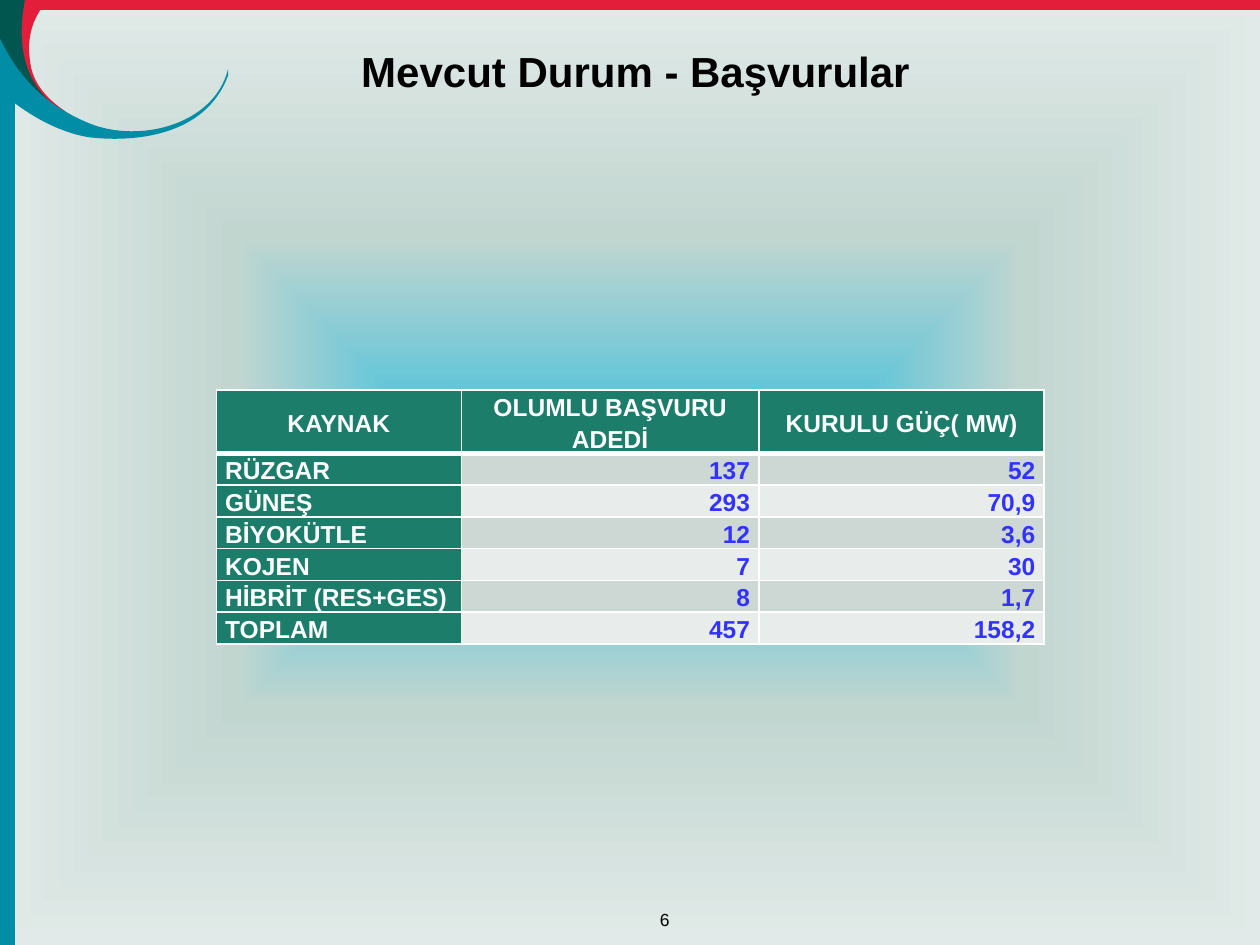
from lxml import etree
from pptx import Presentation
from pptx.dml.color import RGBColor
from pptx.enum.shapes import MSO_SHAPE
from pptx.enum.text import MSO_ANCHOR, PP_ALIGN
from pptx.oxml.ns import qn
from pptx.util import Cm, Pt

RECTANGLE = MSO_SHAPE.RECTANGLE
MIDDLE = MSO_ANCHOR.MIDDLE
LEFT, CENTER, RIGHT = PP_ALIGN.LEFT, PP_ALIGN.CENTER, PP_ALIGN.RIGHT

BLACK = RGBColor(0x00, 0x00, 0x00)
WHITE = RGBColor(0xFF, 0xFF, 0xFF)
RED = RGBColor(0xE3, 0x1E, 0x3A)
TEAL = RGBColor(0x01, 0x8D, 0xA6)
DARK_GREEN = RGBColor(0x01, 0x56, 0x4F)
HEADER_GREEN = RGBColor(0x1B, 0x7D, 0x6A)
BAND_DARK = RGBColor(0xCD, 0xD7, 0xD4)
BAND_LIGHT = RGBColor(0xE8, 0xEC, 0xEB)
VALUE_BLUE = RGBColor(0x33, 0x33, 0xFF)
GLOW_CENTER = RGBColor(0x2F, 0xBD, 0xDD)
GLOW_MIDDLE = RGBColor(0xC2, 0xD6, 0xD0)
GLOW_EDGE = RGBColor(0xE1, 0xEA, 0xE8)

FONT = "Arial"
CM_PER_UNIT = 2.54

RED_SWOOSH = [
    (0.39, -0.01),
    (0.31, 0.08, 0.2, 0.23, 0.24, 0.49),
    (0.27, 0.76, 0.54, 0.89, 0.6, 0.94),
    (0.57, 0.98, 0.14, 0.67, 0.12, 0.64),
    (0.09, 0.61, -0.02, 0.34, -0.04, 0.23),
    (-0.04, -0.01),
]
GREEN_SWOOSH = [
    (-0.04, -0.01),
    (0.2, -0.01),
    (0.05, 0.74, 0.55, 0.92, 0.68, 0.98),
    (0.33, 0.81),
    (0.12, 0.61, 0.06, 0.48, -0.04, 0.23),
]
TEAL_SWOOSH = [
    (1.81, 0.55),
    (1.7, 0.99, 1.11, 1.14, 0.71, 0.98),
    (0.3, 0.81, 0.11, 0.56, -0.04, 0.22),
    (-0.04, 0.68),
    (0.07, 0.8, 0.38, 1.04, 0.71, 1.09),
    (1.05, 1.13, 1.63, 1.09, 1.81, 0.6),
]

APPLICATIONS = [
    ("KAYNAK", "OLUMLU BAŞVURU ADEDİ", "KURULU GÜÇ( MW)"),
    ("RÜZGAR", "137", "52"),
    ("GÜNEŞ", "293", "70,9"),
    ("BİYOKÜTLE", "12", "3,6"),
    ("KOJEN", "7", "30"),
    ("HİBRİT (RES+GES)", "8", "1,7"),
    ("TOPLAM", "457", "158,2"),
]
COLUMN_WIDTHS = (4.94, 6.0, 5.75)
HEADER_HEIGHT, ROW_HEIGHT = 1.28, 0.64


def set_glow_background(slide):
    slide.background.fill.gradient()
    gradient = slide.element.find(".//" + qn("a:gradFill"))
    for child in list(gradient):
        gradient.remove(child)
    stops = etree.SubElement(gradient, qn("a:gsLst"))
    for position, color in ((0, GLOW_CENTER), (50, GLOW_MIDDLE), (100, GLOW_EDGE)):
        stop = etree.SubElement(stops, qn("a:gs"), pos=str(position * 1000))
        etree.SubElement(stop, qn("a:srgbClr"), val=str(color))
    focus = etree.SubElement(gradient, qn("a:path"), path="shape")
    etree.SubElement(focus, qn("a:fillToRect"), dict.fromkeys("ltrb", "50000"))


def paint(shape, color):
    shape.shadow.inherit = False
    shape.fill.solid()
    shape.fill.fore_color.rgb = color
    shape.line.fill.background()


def add_bar(slide, left, top, width, height, color):
    bar = slide.shapes.add_shape(RECTANGLE, Cm(left), Cm(top), Cm(width), Cm(height))
    paint(bar, color)


def to_points(segment):
    lengths = [Cm(value * CM_PER_UNIT) for value in segment]
    return list(zip(lengths[::2], lengths[1::2]))


def add_swoosh(group, outline, color):
    segments = [to_points(segment) for segment in outline]
    anchors = [segment[-1] for segment in segments]
    builder = group.shapes.build_freeform(*anchors[0])
    builder.add_line_segments(anchors[1:], close=True)
    swoosh = builder.convert_to_shape()
    left, top = (min(axis) for axis in zip(*anchors))
    lines = list(swoosh.element.iter(qn("a:lnTo")))
    for line, points in zip(lines, segments[1:]):
        if len(points) == 3:
            curve = etree.Element(qn("a:cubicBezTo"))
            for x, y in points:
                etree.SubElement(curve, qn("a:pt"), x=str(x - left), y=str(y - top))
            line.getparent().replace(line, curve)
    paint(swoosh, color)


def write(frame, text, size, color, align, bold=False):
    paragraph = frame.paragraphs[0]
    paragraph.alignment = align
    run = paragraph.add_run()
    run.text = text
    run.font.name = FONT
    run.font.size = Pt(size)
    run.font.bold = bold
    run.font.color.rgb = color
    return paragraph


def set_title(slide, text):
    title = slide.shapes.title
    title.left, title.top, title.width, title.height = Cm(1.91), Cm(0.63), Cm(21.8), Cm(1.57)
    title.text_frame.vertical_anchor = MIDDLE
    write(title.text_frame, text, 24, BLACK, CENTER, bold=True)


def add_page_number(slide, number):
    box = slide.shapes.add_textbox(Cm(10.44), Cm(18.19), Cm(5.92), Cm(0.64))
    box.text_frame.word_wrap = True
    write(box.text_frame, number, 10, BLACK, CENTER)


def set_borders(cell, widths):
    properties = cell._tc.get_or_add_tcPr()
    for index, (side, width) in enumerate(zip("LRTB", widths)):
        border = etree.Element(qn("a:ln" + side), w=str(Pt(width)))
        fill = etree.SubElement(border, qn("a:solidFill"))
        etree.SubElement(fill, qn("a:srgbClr"), val=str(WHITE))
        properties.insert(index, border)


def format_cell(cell, text, row, column):
    is_label = row == 0 or column == 0
    band = BAND_DARK if row % 2 else BAND_LIGHT
    align = CENTER if row == 0 else LEFT if column == 0 else RIGHT
    cell.margin_left = cell.margin_right = Cm(0.18)
    cell.margin_top = cell.margin_bottom = 0
    cell.vertical_anchor = MIDDLE
    cell.fill.solid()
    cell.fill.fore_color.rgb = HEADER_GREEN if is_label else band
    color = WHITE if is_label else VALUE_BLUE
    write(cell.text_frame, text, 14, color, align, bold=True).line_spacing = 1.15
    set_borders(cell, (1, 1, 3 if row == 1 else 1, 3 if row == 0 else 1))


def add_application_table(slide):
    heights = [HEADER_HEIGHT] + [ROW_HEIGHT] * (len(APPLICATIONS) - 1)
    table = slide.shapes.add_table(
        len(heights), len(COLUMN_WIDTHS), Cm(4.36), Cm(7.86),
        Cm(sum(COLUMN_WIDTHS)), Cm(sum(heights)),
    ).table
    for column, width in zip(table.columns, COLUMN_WIDTHS):
        column.width = Cm(width)
    for row, height in zip(table.rows, heights):
        row.height = Cm(height)
    for row, texts in enumerate(APPLICATIONS):
        for column, text in enumerate(texts):
            format_cell(table.cell(row, column), text, row, column)


def main():
    presentation = Presentation()
    presentation.slide_width, presentation.slide_height = Cm(25.4), Cm(19.05)
    slide = presentation.slides.add_slide(presentation.slide_layouts[5])
    set_glow_background(slide)
    add_bar(slide, -0.1, 0, 0.4, 19.05, TEAL)
    corner = slide.shapes.add_group_shape()
    add_swoosh(corner, RED_SWOOSH, RED)
    add_swoosh(corner, GREEN_SWOOSH, DARK_GREEN)
    add_swoosh(corner, TEAL_SWOOSH, TEAL)
    add_bar(slide, 0.5, 0, 24.9, 0.2, RED)
    set_title(slide, "Mevcut Durum - Başvurular")
    add_application_table(slide)
    add_page_number(slide, "6")
    presentation.save("out.pptx")


if __name__ == "__main__":
    main()
